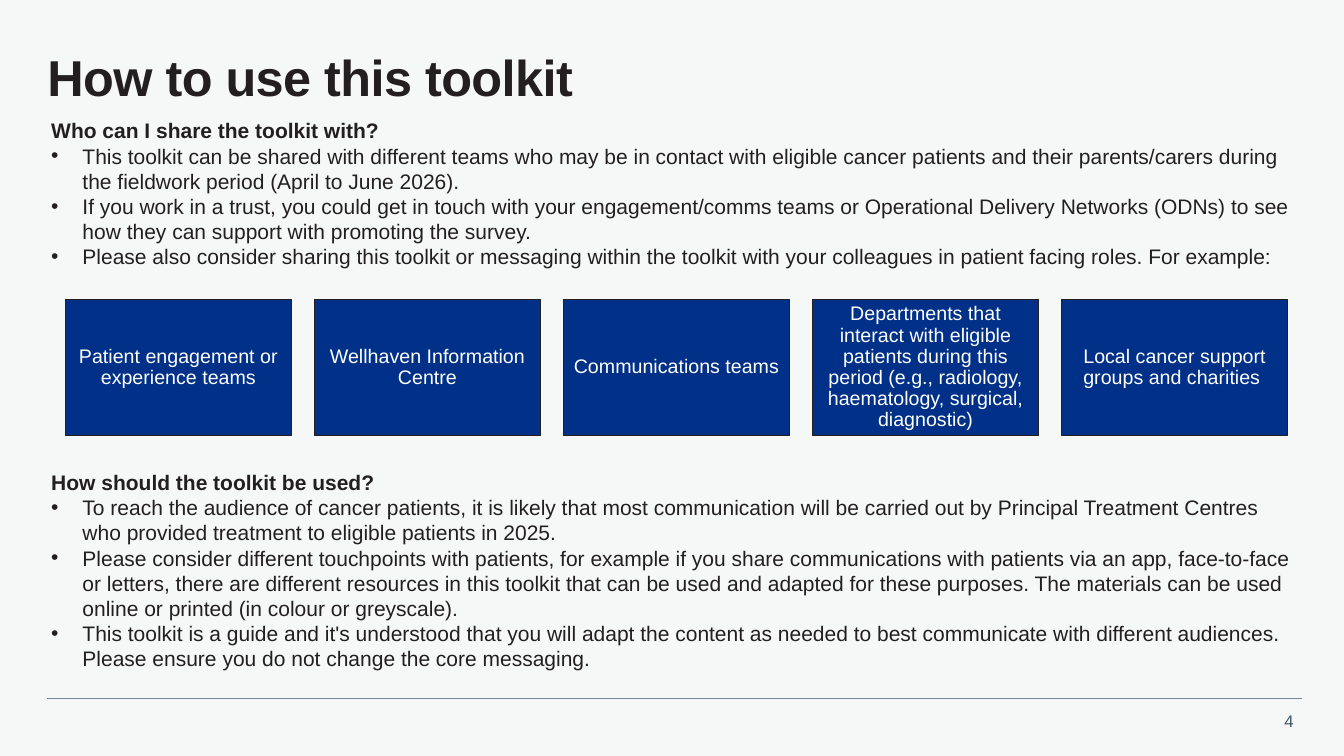
from pptx import Presentation
from pptx.dml.color import RGBColor as Rgb
from pptx.enum.shapes import MSO_CONNECTOR as Link, MSO_SHAPE as Form
from pptx.enum.text import MSO_ANCHOR as Anchor, MSO_AUTO_SIZE as Fit, PP_ALIGN as Align
from pptx.oxml.ns import qn
from pptx.util import Inches, Pt
from lxml.etree import SubElement as Sub

INK, NAVY, WHITE = "231F20", "003087", "FFFFFF"
SHARE = [
    "Who can I share the toolkit with?",
    "This toolkit can be shared with different teams who may be in contact with eligible cancer patients and their parents/carers during the fieldwork period (April to June 2026).",
    "If you work in a trust, you could get in touch with your engagement/comms teams or Operational Delivery Networks (ODNs) to see how they can support with promoting the survey.",
    "Please also consider sharing this toolkit or messaging within the toolkit with your colleagues in patient facing roles. For example:",
]
USAGE = [
    "How should the toolkit be used?",
    "To reach the audience of cancer patients, it is likely that most communication will be carried out by Principal Treatment Centres who provided treatment to eligible patients in 2025.",
    "Please consider different touchpoints with patients, for example if you share communications with patients via an app, face-to-face or letters, there are different resources in this toolkit that can be used and adapted for these purposes. The materials can be used online or printed (in colour or greyscale).",
    "This toolkit is a guide and it's understood that you will adapt the content as needed to best communicate with different audiences. Please ensure you do not change the core messaging.",
]
TEAMS = [
    "Patient engagement or experience teams",
    "Wellhaven Information Centre",
    "Communications teams",
    "Departments that interact with eligible patients during this period (e.g., radiology, haematology, surgical, diagnostic)",
    "Local cancer support groups and charities ",
]


def paint(item, color):
    """Give a fill a solid colour."""
    item.solid()
    item.fore_color.rgb = Rgb.from_string(color)


def apply(item, values):
    """Set each attribute named in a dict."""
    for name, value in values.items():
        setattr(item, name, value)


def style(para, size, color=INK, bold=False, **values):
    """Format a paragraph and its font."""
    apply(para, values)
    apply(para.font, {"name": "Arial", "size": Pt(size), "bold": bold})
    para.font.color.rgb = Rgb.from_string(color)


def frame(shape, pad, **values):
    """Set the margins and layout of a text frame."""
    sides = ("margin_left", "margin_top", "margin_right", "margin_bottom")
    apply(shape.text_frame, dict.fromkeys(sides, Inches(pad)))
    apply(shape.text_frame, {"word_wrap": True, "auto_size": Fit.NONE, **values})
    return shape.text_frame


def head(slide, text):
    """Place and format the slide title."""
    title = slide.shapes.title
    apply(title, {"left": Inches(0.47), "top": Inches(0.32),
                  "width": Inches(12.47), "height": Inches(0.95)})
    para = frame(title, 0, vertical_anchor=Anchor.MIDDLE).paragraphs[0]
    run = para.add_run()
    run.text = text
    style(para, 36, bold=True, alignment=Align.LEFT, line_spacing=0.9)
    run.font._element.set("spc", "-40")


def bullet(para):
    """Give a paragraph a hanging bullet."""
    props = para._p.get_or_add_pPr()
    indent = Inches(0.31)
    props.set("marL", str(indent))
    props.set("indent", str(-indent))
    Sub(props, qn("a:buFont"), typeface="Arial")
    Sub(props, qn("a:buChar"), char="•")


def section(slide, top, height, lines):
    """Add a bold heading with bullets below it."""
    box = slide.shapes.add_textbox(Inches(0.41), Inches(top), Inches(12.51), Inches(height))
    text = frame(box, 0.1, margin_top=Inches(0.05), margin_bottom=Inches(0.05))
    text.text = "\n".join(lines)
    for num, para in enumerate(text.paragraphs):
        if num:
            bullet(para)
        style(para, 15, bold=num == 0)


def card(slide, left, text):
    """Add a navy box that names a team."""
    box = slide.shapes.add_shape(Form.RECTANGLE, Inches(left), Inches(2.97),
                                 Inches(2.24), Inches(1.35))
    box.shadow.inherit = False
    paint(box.fill, NAVY)
    paint(box.line.fill, INK)
    box.line.width = Pt(1)
    body = frame(box, 0.06, vertical_anchor=Anchor.MIDDLE)
    body.text = text
    style(body.paragraphs[0], 14, WHITE, alignment=Align.CENTER, line_spacing=0.9)


def footer(slide, number):
    """Add the bottom rule and page number."""
    rule = slide.shapes.add_connector(Link.STRAIGHT, Inches(0.47), Inches(6.93),
                                      Inches(12.91), Inches(6.93))
    Sub(rule._element.spPr, qn("a:effectLst"))
    paint(rule.line.fill, "768692")
    rule.line.width = Pt(0.5)
    box = slide.shapes.add_textbox(Inches(12.52), Inches(7), Inches(0.41), Inches(0.3))
    text = frame(box, 0.1, margin_top=Inches(0.05), margin_bottom=Inches(0.05))
    text.text = number
    style(text.paragraphs[0], 12, "425563", alignment=Align.RIGHT)


def main():
    """Build and save the slide."""
    deck = Presentation()
    apply(deck, {"slide_width": Inches(13.33), "slide_height": Inches(7.5)})
    slide = deck.slides.add_slide(deck.slide_layouts[5])
    paint(slide.background.fill, "F6F8F8")
    head(slide, "How to use this toolkit")
    section(slide, 1.12, 1.6, SHARE)
    for num, team in enumerate(TEAMS):
        card(slide, 0.65 + 2.47 * num, team)
    section(slide, 4.61, 2.1, USAGE)
    footer(slide, "4")
    deck.save("out.pptx")


if __name__ == "__main__":
    main()
